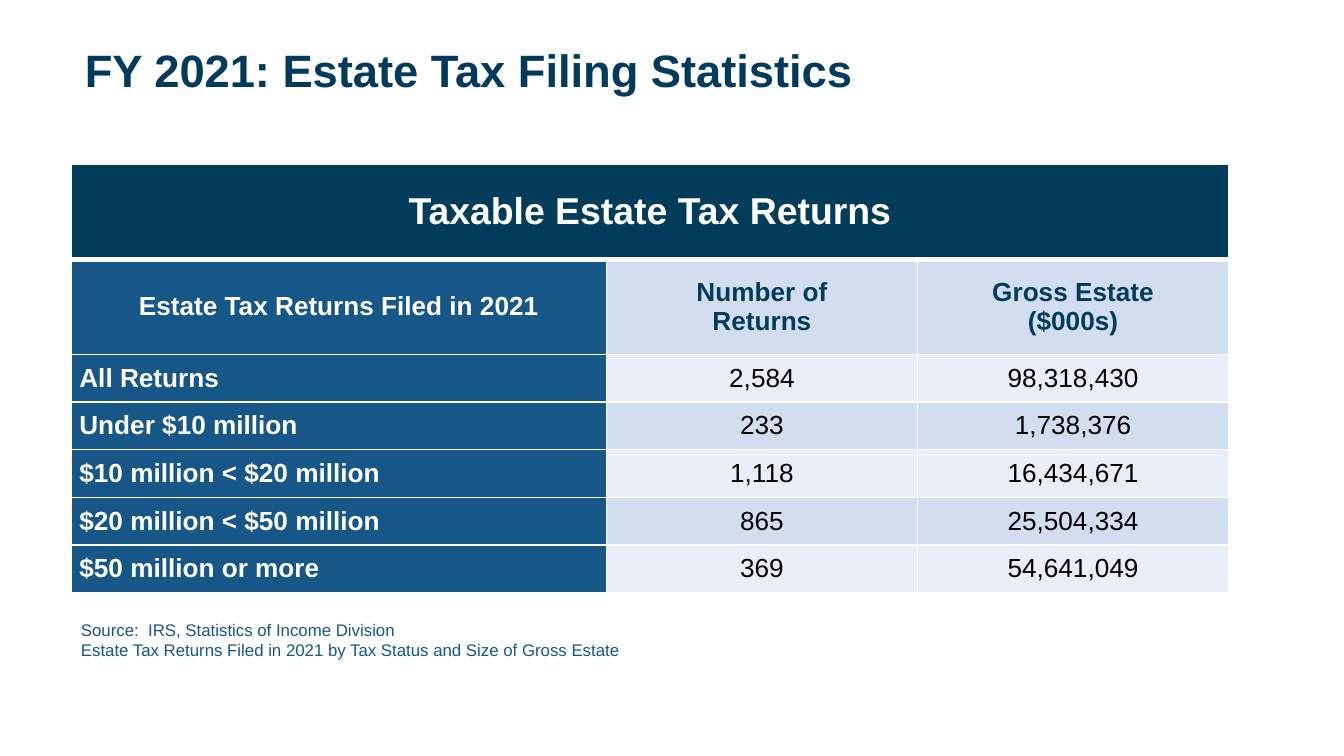
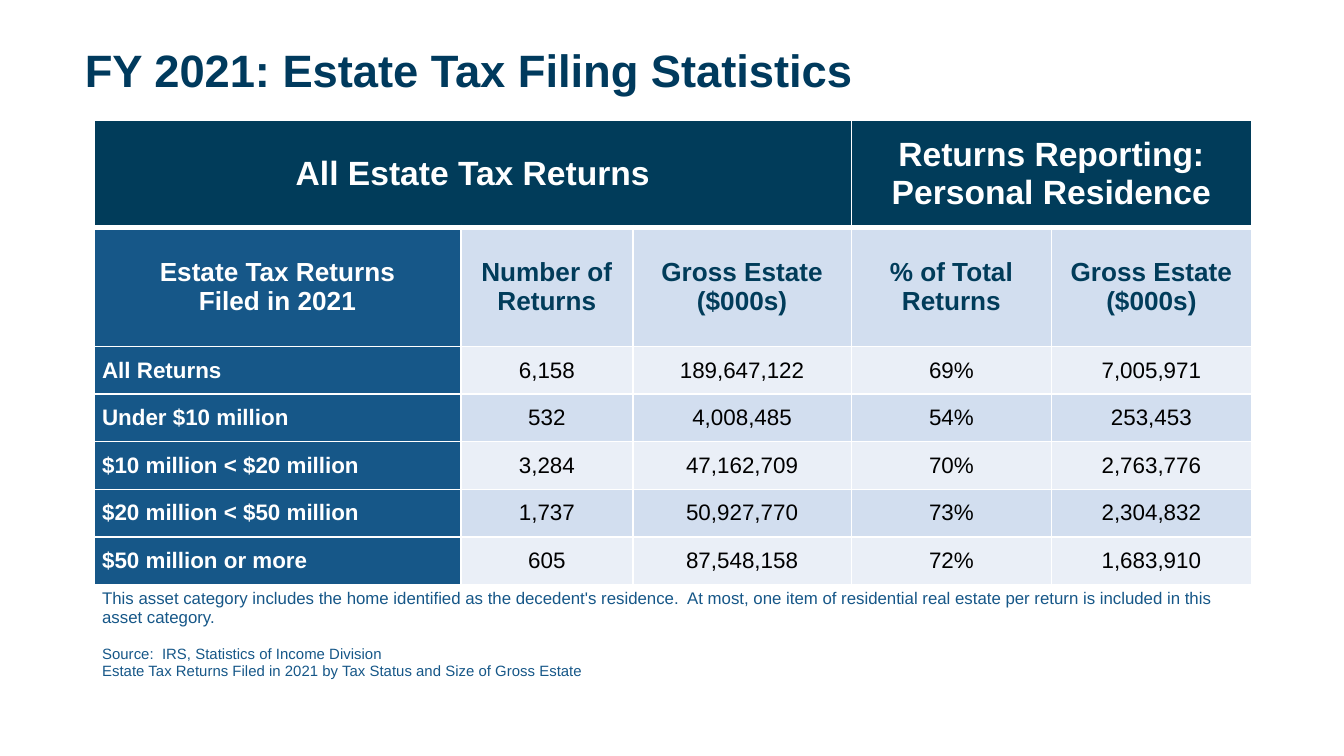
import lxml.etree
import pptx
import pptx.dml.color
import pptx.enum.text
import pptx.oxml.ns
import pptx.util

Cm = pptx.util.Cm
Pt = pptx.util.Pt
RGBColor = pptx.dml.color.RGBColor
ALIGN = pptx.enum.text.PP_ALIGN
MIDDLE = pptx.enum.text.MSO_ANCHOR.MIDDLE
qn = pptx.oxml.ns.qn

TITLE_BLUE = RGBColor(0x00, 0x3A, 0x5D)
NAVY = RGBColor(0x01, 0x3C, 0x5A)
BLUE = RGBColor(0x16, 0x57, 0x88)
MID_TINT = RGBColor(0xD2, 0xDE, 0xEF)
PALE_TINT = RGBColor(0xEA, 0xEF, 0xF7)
WHITE = RGBColor(0xFF, 0xFF, 0xFF)
BLACK = RGBColor(0x00, 0x00, 0x00)

FONT = "Arial"
TITLE = "FY 2021: Estate Tax Filing Statistics"
SOURCE = (
    "Source:  IRS, Statistics of Income Division\n"
    "Estate Tax Returns Filed in 2021 by Tax Status and Size of Gross Estate"
)
RESIDENCE_NOTE = (
    "This asset category includes the home identified as the decedent's residence.  "
    "At most, one item of residential real estate per return is included in this asset category."
)
SIZE_CLASSES = [
    "All Returns",
    "Under $10 million",
    "$10 million < $20 million",
    "$20 million < $50 million",
    "$50 million or more",
]
TABLE_WIDTH = 21.87
DATA_ROW_HEIGHT = 0.9

TAXABLE_RETURNS = {
    "box": (1.35, 3.1),
    "columns": [10.11, 5.88, 5.88],
    "header_heights": [1.8, 1.8],
    "bands": [("Taxable Estate Tax Returns", 0, 2)],
    "band_size": 20,
    "headings": ["Estate Tax Returns Filed in 2021", "Number of\nReturns", "Gross Estate\n($000s)"],
    "values": [
        ["2,584", "98,318,430"],
        ["233", "1,738,376"],
        ["1,118", "16,434,671"],
        ["865", "25,504,334"],
        ["369", "54,641,049"],
    ],
    "data_size": 14,
}
ALL_RETURNS = {
    "box": (1.78, 2.27),
    "columns": [6.93, 3.25, 4.13, 3.78, 3.78],
    "header_heights": [2.03, 2.25],
    "bands": [("All Estate Tax Returns", 0, 2), ("Returns Reporting:\nPersonal Residence", 3, 4)],
    "band_size": 18,
    "headings": [
        "Estate Tax Returns\nFiled in 2021",
        "Number of\nReturns",
        "Gross Estate\n($000s)",
        "% of Total Returns",
        "Gross Estate ($000s)",
    ],
    "values": [
        ["6,158", "189,647,122", "69%", "7,005,971"],
        ["532", "4,008,485", "54%", "253,453"],
        ["3,284", "47,162,709", "70%", "2,763,776"],
        ["1,737", "50,927,770", "73%", "2,304,832"],
        ["605", "87,548,158", "72%", "1,683,910"],
    ],
    "data_size": 12,
    "note_height": 1.88,
}


def write_paragraph(paragraph, text, size, color, bold=False, alignment=ALIGN.LEFT):
    """Fill a paragraph and format its runs and line breaks."""
    paragraph.text = text
    paragraph.alignment = alignment
    for run in paragraph.runs:
        run.font.name = FONT
        run.font.size = Pt(size)
        run.font.bold = bold
        run.font.color.rgb = color
    for line_break in paragraph._p.findall(qn("a:br")):
        lxml.etree.SubElement(line_break, qn("a:rPr"), sz=str(int(size * 100)))


def set_borders(cell, top=1, bottom=1):
    """Draw white lines around a cell, with widths in points."""
    properties = cell._tc.get_or_add_tcPr()
    widths = {"a:lnL": 1, "a:lnR": 1, "a:lnT": top, "a:lnB": bottom}
    for position, (tag, width) in enumerate(widths.items()):
        line = lxml.etree.Element(qn(tag), w=str(Pt(width)))
        fill = lxml.etree.SubElement(line, qn("a:solidFill"))
        lxml.etree.SubElement(fill, qn("a:srgbClr"), val=str(WHITE))
        properties.insert(position, line)


def style_cell(cell, fill, top=1, bottom=1):
    """Set the fill, borders, margins and anchor of a cell."""
    if fill is None:
        cell.fill.background()
    else:
        cell.fill.solid()
        cell.fill.fore_color.rgb = fill
    set_borders(cell, top, bottom)
    cell.vertical_anchor = MIDDLE
    cell.margin_left = cell.margin_right = Cm(0.15)
    cell.margin_top = cell.margin_bottom = 0


def fill_header(table, content):
    """Write the merged bands and the column headings."""
    for column in range(len(content["columns"])):
        style_cell(table.cell(0, column), NAVY, bottom=3)
    for text, first, last in content["bands"]:
        cell = table.cell(0, first)
        cell.merge(table.cell(0, last))
        write_paragraph(cell.text_frame.paragraphs[0], text, content["band_size"], WHITE, True, ALIGN.CENTER)
    for column, text in enumerate(content["headings"]):
        cell = table.cell(1, column)
        fill, color = (MID_TINT, NAVY) if column else (BLUE, WHITE)
        style_cell(cell, fill, top=3)
        write_paragraph(cell.text_frame.paragraphs[0], text, 14, color, True, ALIGN.CENTER)


def fill_data(table, content):
    """Write one row for each size class, with alternating tints."""
    size = content["data_size"]
    for index, (label, values) in enumerate(zip(SIZE_CLASSES, content["values"])):
        label_cell = table.cell(index + 2, 0)
        style_cell(label_cell, BLUE)
        write_paragraph(label_cell.text_frame.paragraphs[0], label, size, WHITE, True)
        for column, value in enumerate(values, start=1):
            cell = table.cell(index + 2, column)
            style_cell(cell, MID_TINT if index % 2 else PALE_TINT)
            write_paragraph(cell.text_frame.paragraphs[0], value, size, BLACK, alignment=ALIGN.CENTER)


def fill_note(table):
    """Write the note and the source in a merged last row."""
    row = len(table.rows) - 1
    last = len(table.columns) - 1
    for column in range(last + 1):
        style_cell(table.cell(row, column), None)
    cell = table.cell(row, 0)
    cell.merge(table.cell(row, last))
    write_paragraph(cell.text_frame.paragraphs[0], RESIDENCE_NOTE, 9, BLUE)
    source = cell.text_frame.add_paragraph()
    write_paragraph(source, SOURCE, 8, BLUE)
    source.space_before = Pt(10)


def add_returns_table(slide, content):
    """Add a returns table at the corner given by its box."""
    left, top = content["box"]
    heights = content["header_heights"] + [DATA_ROW_HEIGHT] * len(SIZE_CLASSES)
    if "note_height" in content:
        heights.append(content["note_height"])
    shape = slide.shapes.add_table(
        len(heights), len(content["columns"]), Cm(left), Cm(top), Cm(TABLE_WIDTH), Cm(sum(heights))
    )
    table = shape.table
    table.first_row = table.horz_banding = False
    for column, width in zip(table.columns, content["columns"]):
        column.width = Cm(width)
    for row, height in zip(table.rows, heights):
        row.height = Cm(height)
    fill_header(table, content)
    fill_data(table, content)
    if "note_height" in content:
        fill_note(table)


def add_source(slide, left, top, width, height):
    """Add the source lines under a table."""
    frame = slide.shapes.add_textbox(Cm(left), Cm(top), Cm(width), Cm(height)).text_frame
    frame.word_wrap = True
    frame.margin_left = frame.margin_right = Cm(0.18)
    frame.margin_top = frame.margin_bottom = Cm(0.1)
    write_paragraph(frame.paragraphs[0], SOURCE, 9, BLUE)


def add_titled_slide(presentation):
    """Add a slide with the shared title."""
    slide = presentation.slides.add_slide(presentation.slide_layouts[5])
    title = slide.shapes.title
    title.left, title.top, title.width, title.height = Cm(1.35), Cm(0.76), Cm(22.3), Cm(1.25)
    frame = title.text_frame
    frame.auto_size = pptx.enum.text.MSO_AUTO_SIZE.NONE
    frame.vertical_anchor = MIDDLE
    paragraph = frame.paragraphs[0]
    write_paragraph(paragraph, TITLE, 24.3, TITLE_BLUE, True)
    paragraph.line_spacing = 0.9
    return slide


def main():
    """Build both slides and save the presentation."""
    presentation = pptx.Presentation()
    presentation.slide_width = Cm(25.4)
    presentation.slide_height = Cm(14.29)
    taxable_slide = add_titled_slide(presentation)
    add_returns_table(taxable_slide, TAXABLE_RETURNS)
    add_source(taxable_slide, 1.35, 11.61, TABLE_WIDTH, 0.94)
    add_returns_table(add_titled_slide(presentation), ALL_RETURNS)
    presentation.save("out.pptx")


if __name__ == "__main__":
    main()
